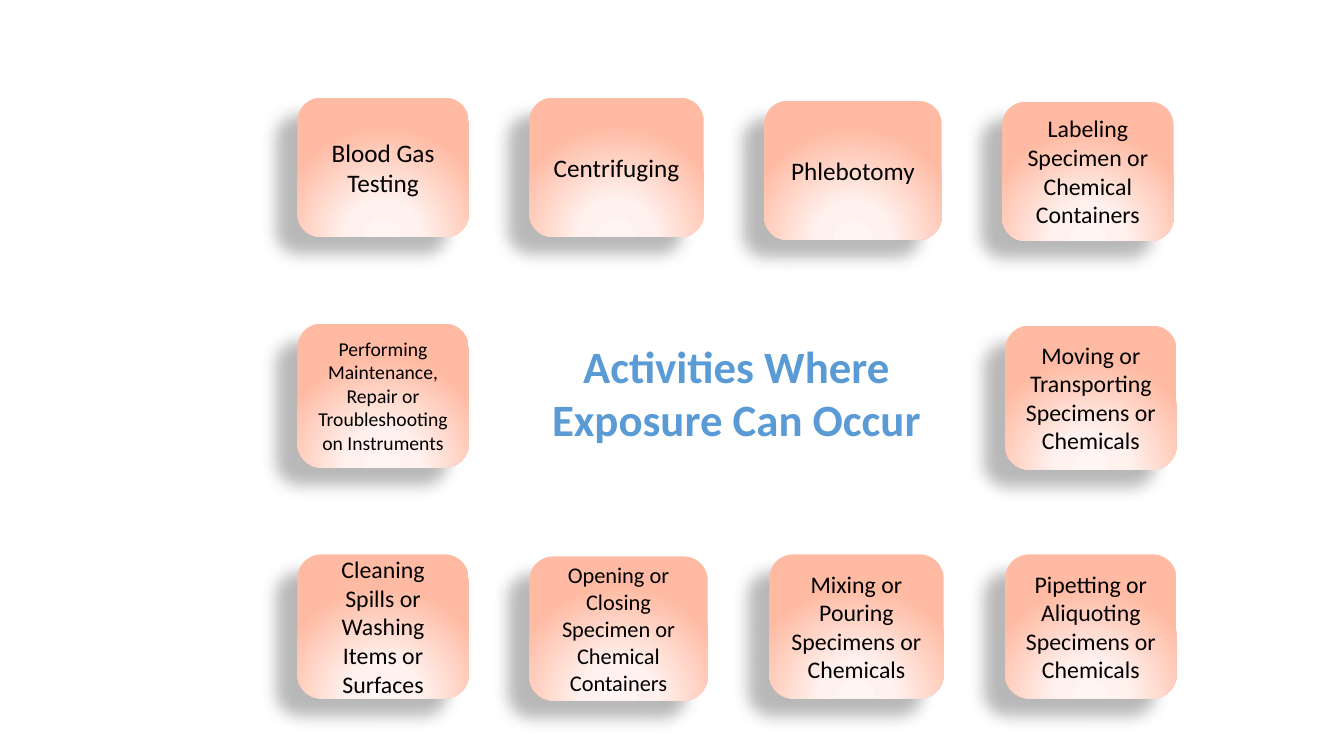
from pptx import Presentation
from pptx.dml.color import RGBColor
from pptx.enum.shapes import MSO_SHAPE
from pptx.enum.text import MSO_ANCHOR, PP_ALIGN
from pptx.oxml import parse_xml
from pptx.oxml.ns import nsdecls
from pptx.util import Inches, Pt

ROUNDED = MSO_SHAPE.ROUNDED_RECTANGLE
MIDDLE = MSO_ANCHOR.MIDDLE
CENTER = PP_ALIGN.CENTER

FONT = "Calibri"
BLACK, BLUE = "000000", "5B9BD5"
GLOW_STOPS = [(0, "FFF5F2"), (34, "FFF1ED"), (100, "FFBAA3")]
TOP_H, LOWER_H = 1.38, 1.43

# left, top, width, height, font size, text
ACTIVITIES = [
    (2.95, 0.97, 1.7, TOP_H, 18, "Blood Gas Testing"),
    (7.58, 1.0, 1.76, TOP_H, 18, "Phlebotomy"),
    (5.25, 0.97, 1.73, TOP_H, 18, "Centrifuging"),
    (9.94, 1.01, 1.7, TOP_H, 17, "Labeling Specimen or Chemical Containers"),
    (2.95, 5.5, 1.7, LOWER_H, 17, "Cleaning Spills or Washing Items or Surfaces"),
    (2.95, 3.21, 1.7, LOWER_H, 14,
     "Performing Maintenance, Repair or Troubleshooting on Instruments"),
    (5.25, 5.52, 1.77, LOWER_H, 16, "Opening or Closing Specimen or Chemical Containers"),
    (7.63, 5.5, 1.73, LOWER_H, 17, "Mixing or Pouring Specimens or Chemicals"),
    (9.97, 3.23, 1.7, LOWER_H, 17, "Moving or Transporting Specimens or Chemicals"),
    (9.97, 5.5, 1.7, LOWER_H, 17, "Pipetting or Aliquoting Specimens or Chemicals"),
]


def rgb(color):
    return RGBColor.from_string(color)


def set_text(s, text, size, color, bold=False):
    tf = s.text_frame
    tf.word_wrap = True
    tf.vertical_anchor = MIDDLE
    p = tf.paragraphs[0]
    p.text = text
    p.alignment = CENTER
    p.font.name = FONT
    p.font.size = Pt(size)
    p.font.bold = bold
    p.font.color.rgb = rgb(color)


def add_glow(s):
    """Fill with a radial gradient centred on the bottom edge."""
    stops = "".join(
        f'<a:gs pos="{pos * 1000}"><a:srgbClr val="{color}"/></a:gs>'
        for pos, color in GLOW_STOPS)
    grad = parse_xml(
        f'<a:gradFill {nsdecls("a")} rotWithShape="1"><a:gsLst>{stops}</a:gsLst>'
        '<a:path path="circle">'
        '<a:fillToRect l="50000" t="100000" r="50000" b="0"/></a:path></a:gradFill>')
    s._element.spPr.prstGeom.addnext(grad)


def add_shadow(s):
    """Cast a soft shadow down and to the left."""
    s.shadow.inherit = False
    effects = s._element.spPr.find("{*}effectLst")
    effects.append(parse_xml(
        f'<a:outerShdw {nsdecls("a")} blurRad="{Pt(11.8)}" dist="{Pt(19.7)}" '
        f'dir="{141 * 60000}" algn="ctr" rotWithShape="0">'
        f'<a:srgbClr val="{BLACK}"><a:alpha val="28000"/></a:srgbClr></a:outerShdw>'))


def add_activity(slide, left, top, width, height, size, text):
    s = slide.shapes.add_shape(
        ROUNDED, Inches(left), Inches(top), Inches(width), Inches(height))
    s.line.fill.background()
    add_glow(s)
    add_shadow(s)
    set_text(s, text, size, BLACK)


def add_title(slide):
    s = slide.shapes.add_textbox(Inches(5.25), Inches(3.3), Inches(4.11), Inches(1.18))
    set_text(s, "Activities Where Exposure Can Occur", 32, BLUE, bold=True)


def main():
    prs = Presentation()
    prs.slide_width = Inches(13.33)
    prs.slide_height = Inches(7.5)
    slide = prs.slides.add_slide(prs.slide_layouts[6])
    for activity in ACTIVITIES:
        add_activity(slide, *activity)
    add_title(slide)
    prs.save("out.pptx")


if __name__ == "__main__":
    main()
